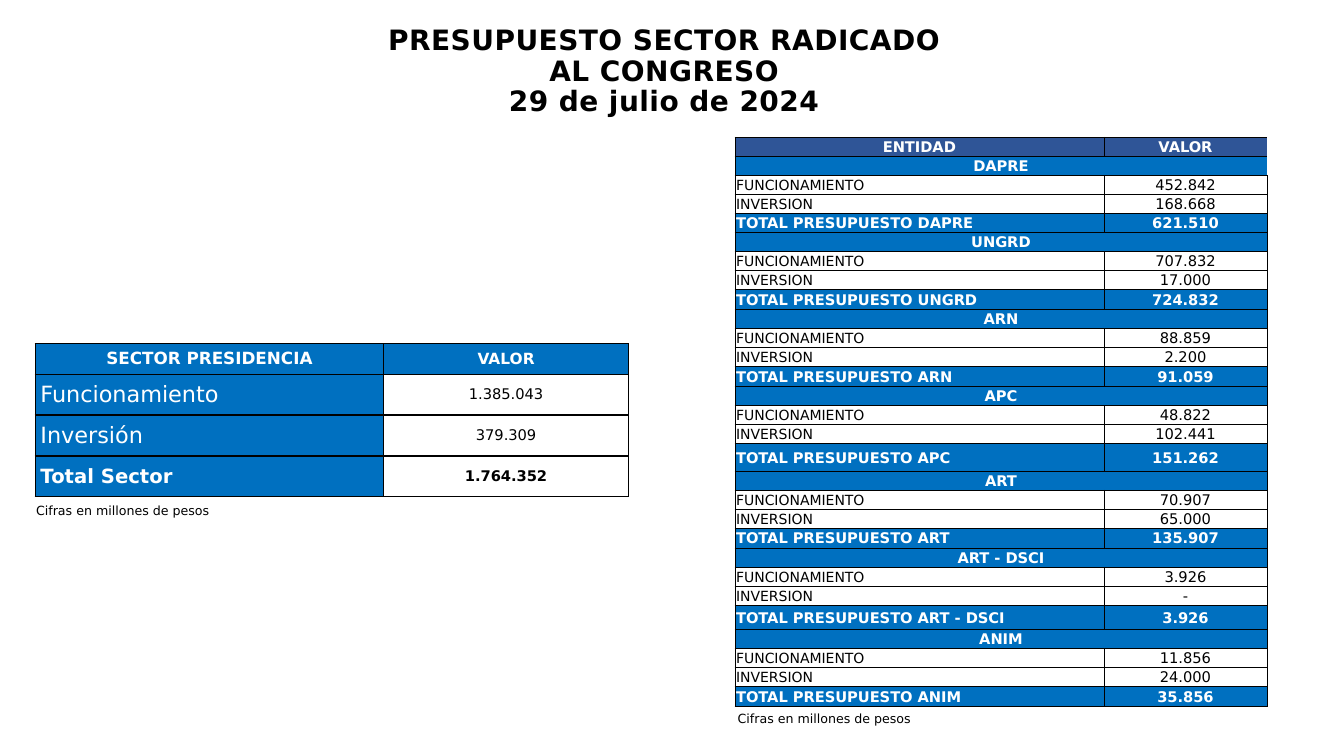
from lxml import etree
from pptx import Presentation
from pptx import util as u
from pptx.dml import color
from pptx.enum import text
from pptx.oxml import ns

COLORS = {"black": "000000", "white": "FFFFFF", "blue": "0070C0", "navy": "2F5597"}
FONT = "DejaVu Sans"
LEFT, CENTER = text.PP_ALIGN.LEFT, text.PP_ALIGN.CENTER
MIDDLE = text.MSO_ANCHOR.MIDDLE
NOTE = "Cifras en millones de pesos"
TITLE = ["PRESUPUESTO SECTOR RADICADO", "AL CONGRESO", "29 de julio de 2024"]
SECTOR = [
    ("Funcionamiento", "1.385.043", 16, False),
    ("Inversión", "379.309", 16, False),
    ("Total Sector", "1.764.352", 14, True),
]
ENTITIES = [
    ("DAPRE", "452.842", "168.668", "621.510", 0.48),
    ("UNGRD", "707.832", "17.000", "724.832", 0.5),
    ("ARN", "88.859", "2.200", "91.059", 0.5),
    ("APC", "48.822", "102.441", "151.262", 0.7),
    ("ART", "70.907", "65.000", "135.907", 0.5),
    ("ART - DSCI", "3.926", "-", "3.926", 0.61),
    ("ANIM", "11.856", "24.000", "35.856", 0.5),
]


def apply_values(target, values):
    for name, value in values.items():
        setattr(target, name, value)


def rgb(name):
    return color.RGBColor.from_string(COLORS[name])


def write(para, words, size, ink="black", bold=False, align=LEFT):
    para.alignment = align
    span = para.add_run()
    span.text = words
    apply_values(span.font, {"name": FONT, "size": u.Pt(size), "bold": bold})
    span.font.color.rgb = rgb(ink)
    return span


def add_title(page):
    box = page.shapes.title
    apply_values(box, {"left": u.Cm(6.22), "top": u.Cm(0.81),
                       "width": u.Cm(21.03), "height": u.Cm(2.01)})
    frame = box.text_frame
    apply_values(frame, {"margin_left": u.Cm(0.1), "margin_right": u.Cm(0.1),
                         "margin_top": u.Cm(0.05), "margin_bottom": u.Cm(0.05),
                         "vertical_anchor": MIDDLE, "word_wrap": True,
                         "auto_size": text.MSO_AUTO_SIZE.NONE})
    for index, line in enumerate(TITLE):
        para = frame.add_paragraph() if index else frame.paragraphs[0]
        apply_values(para, {"line_spacing": 0.9, "space_before": u.Pt(0)})
        span = write(para, line, 20, bold=True, align=CENTER)
        span.font._element.set("spc", "30")


def add_note(page, left, top):
    box = page.shapes.add_textbox(u.Cm(left), u.Cm(top), u.Cm(7.32), u.Cm(0.64))
    box.text_frame.word_wrap = True
    write(box.text_frame.paragraphs[0], NOTE, 9)


def add_grid(page, left, top, widths, heights):
    frame = page.shapes.add_table(len(heights), len(widths), u.Cm(left), u.Cm(top),
                                  u.Cm(sum(widths)), u.Cm(sum(heights)))
    table = frame.table
    apply_values(table, {"first_row": False, "horz_banding": False})
    for column, width in zip(table.columns, widths):
        column.width = u.Cm(width)
    for row, height in zip(table.rows, heights):
        row.height = u.Cm(height)
    return table


def add_borders(cell, weight, open_sides):
    properties = cell._tc.get_or_add_tcPr()
    for side in "LRTB":
        line = etree.SubElement(properties, ns.qn("a:ln" + side), w=str(u.Pt(weight)))
        if side in open_sides:
            etree.SubElement(line, ns.qn("a:noFill"))
        else:
            fill = etree.SubElement(line, ns.qn("a:solidFill"))
            etree.SubElement(fill, ns.qn("a:srgbClr"), val=COLORS["black"])


def fill_cell(cell, words, size, margins, weight, fill=None, bold=False,
              align=CENTER, open_sides=""):
    add_borders(cell, weight, open_sides)
    if fill:
        cell.fill.solid()
        cell.fill.fore_color.rgb = rgb(fill)
    else:
        cell.fill.background()
    sides = ("margin_left", "margin_top", "margin_right", "margin_bottom")
    apply_values(cell, {side: u.Cm(gap) for side, gap in zip(sides, margins)})
    cell.vertical_anchor = MIDDLE
    if words:
        write(cell.text_frame.paragraphs[0], words, size,
              "white" if fill else "black", bold, align)


def add_sector_table(page):
    table = add_grid(page, 0.89, 8.66, [8.78, 6.17], [0.76] + [1.03] * len(SECTOR))
    padded, tight = [0.13] * 4, [0] * 4
    for column, (words, size) in enumerate([("SECTOR PRESIDENCIA", 12), ("VALOR", 11)]):
        fill_cell(table.cell(0, column), words, size, padded, 1, "blue", True)
    for row, (label, value, size, bold) in enumerate(SECTOR, 1):
        fill_cell(table.cell(row, 0), label, size, padded, 1, "blue", bold, LEFT)
        fill_cell(table.cell(row, 1), value, 10.5, tight, 1, bold=bold)


def add_entity_table(page):
    heights = [0.46]
    for entity in ENTITIES:
        heights += [0.48, 0.48, 0.48, entity[-1]]
    table = add_grid(page, 18.52, 3.46, [9.3, 4.11], heights)
    margins = [0.03, 0.03, 0.03, 0]
    fill_cell(table.cell(0, 0), "ENTIDAD", 10.5, margins, 0.5, "navy", True)
    fill_cell(table.cell(0, 1), "VALOR", 10.5, margins, 0.5, "navy", True, open_sides="R")
    for index, (name, running, investment, total, _) in enumerate(ENTITIES):
        top = 1 + 4 * index
        open_sides = "" if index else "R"
        table.cell(top, 0).merge(table.cell(top, 1))
        for column, words in enumerate([name, ""]):
            fill_cell(table.cell(top, column), words, 10.5, margins, 0.5,
                      "blue", True, open_sides=open_sides)
        lines = [("FUNCIONAMIENTO", running, 10, None),
                 ("INVERSION", investment, 10, None),
                 (f"TOTAL PRESUPUESTO {name}", total, 10.5, "blue")]
        for row, (label, value, size, fill) in enumerate(lines, top + 1):
            bold = fill is not None
            fill_cell(table.cell(row, 0), label, size, margins, 0.5, fill, bold, LEFT)
            fill_cell(table.cell(row, 1), value, 10.5, margins, 0.5, fill, bold)


def main():
    deck = Presentation()
    apply_values(deck, {"slide_width": u.Cm(33.87), "slide_height": u.Cm(19.05)})
    page = deck.slides.add_slide(deck.slide_layouts.get_by_name("Title Only"))
    add_title(page)
    add_note(page, 18.34, 17.78)
    add_sector_table(page)
    add_entity_table(page)
    add_note(page, 0.66, 12.55)
    deck.save("out.pptx")


if __name__ == "__main__":
    main()
